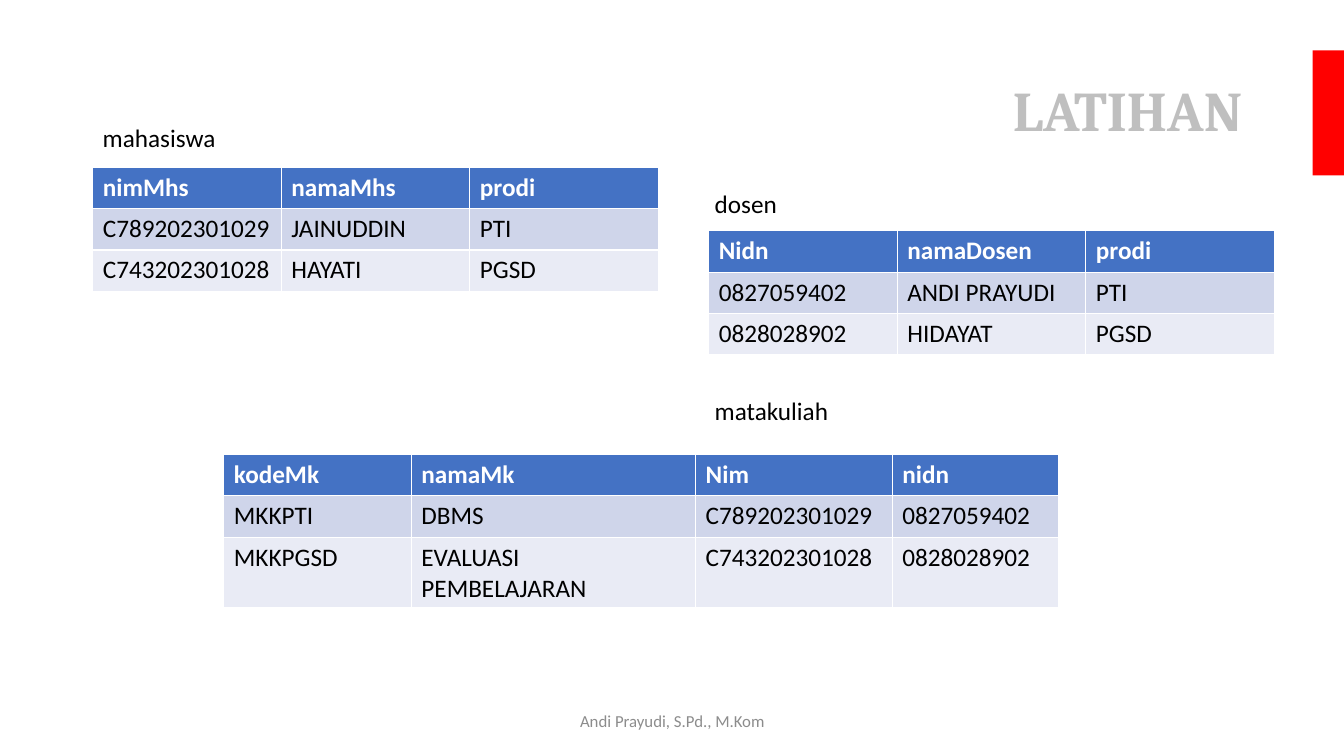
"""Build the LATIHAN exercise slide with three related database tables."""
from dataclasses import dataclass

from pptx import Presentation
from pptx.dml.color import RGBColor
from pptx.enum.shapes import MSO_SHAPE
from pptx.enum.text import MSO_ANCHOR, PP_ALIGN
from pptx.util import Inches, Pt

TITLE = "LATIHAN"
FOOTER = "Andi Prayudi, S.Pd., M.Kom"
TABLES = [
    {
        "name": "mahasiswa", "label_at": (0.92, 1.16), "at": (0.92, 1.66),
        "columns": [1.87] * 3,
        "rows": [
            ("nimMhs", "namaMhs", "prodi"),
            ("C789202301029", "JAINUDDIN", "PTI"),
            ("C743202301028", "HAYATI", "PGSD"),
        ],
    },
    {
        "name": "dosen", "label_at": (6.99, 1.82), "at": (7.03, 2.29),
        "columns": [1.87] * 3,
        "rows": [
            ("Nidn", "namaDosen", "prodi"),
            ("0827059402", "ANDI PRAYUDI", "PTI"),
            ("0828028902", "HIDAYAT", "PGSD"),
        ],
    },
    {
        "name": "matakuliah", "label_at": (6.99, 3.87), "at": (2.22, 4.51),
        "columns": [1.86, 2.82, 1.95, 1.65],
        "rows": [
            ("kodeMk", "namaMk", "Nim", "nidn"),
            ("MKKPTI", "DBMS", "C789202301029", "0827059402"),
            ("MKKPGSD", "EVALUASI PEMBELAJARAN", "C743202301028", "0828028902"),
        ],
    },
]
ROW_HEIGHT = 0.41


@dataclass(frozen=True)
class Theme:
    title_font: str = "Cambria"
    body_font: str = "Calibri"
    title_size: int = 40
    body_size: int = 18
    footer_size: int = 12
    title: str = "BFBFBF"
    text: str = "000000"
    footer: str = "8C8C8C"
    accent: str = "FF0000"
    header: str = "4472C4"
    header_text: str = "FFFFFF"
    bands: tuple = ("CFD5EA", "E9EBF5")


THEME = Theme()


def write(frame, text, size, color, font=THEME.body_font, bold=False, align=None):
    frame.text = text
    para = frame.paragraphs[0]
    para.alignment = align
    span = para.runs[0]
    span.font.name = font
    span.font.size = Pt(size)
    span.font.bold = bold
    span.font.color.rgb = RGBColor.from_string(color)
    return para


def paint(fill, color):
    fill.solid()
    fill.fore_color.rgb = RGBColor.from_string(color)


def add_box(slide, left, top, width, height):
    box = slide.shapes.add_textbox(*map(Inches, (left, top, width, height)))
    box.text_frame.word_wrap = True
    return box.text_frame


def add_title(slide):
    title = slide.shapes.title
    title.left, title.top = Inches(0.92), Inches(0.4)
    title.width, title.height = Inches(11.5), Inches(1.45)
    title.text_frame.vertical_anchor = MSO_ANCHOR.MIDDLE
    para = write(title.text_frame, TITLE, THEME.title_size, THEME.title,
                 THEME.title_font, True, PP_ALIGN.RIGHT)
    para.line_spacing = 0.9


def add_accent(slide):
    bar = slide.shapes.add_shape(
        MSO_SHAPE.RECTANGLE, *map(Inches, (13.02, 0.5, 0.64, 1.24)))
    bar.shadow.inherit = False
    paint(bar.fill, THEME.accent)
    bar.line.fill.background()


def add_footer(slide):
    frame = add_box(slide, 4.42, 6.95, 4.5, 0.4)
    frame.vertical_anchor = MSO_ANCHOR.MIDDLE
    write(frame, FOOTER, THEME.footer_size, THEME.footer, align=PP_ALIGN.CENTER)


def add_data_table(slide, data):
    label = add_box(slide, *data["label_at"], 3.5, 0.4)
    write(label, data["name"], THEME.body_size, THEME.text)

    rows, columns = data["rows"], data["columns"]
    size = (sum(columns), ROW_HEIGHT * len(rows))
    table = slide.shapes.add_table(
        len(rows), len(columns), *map(Inches, (*data["at"], *size))).table
    for column, width in zip(table.columns, columns):
        column.width = Inches(width)
    for index, values in enumerate(rows):
        is_header = index == 0
        table.rows[index].height = Inches(ROW_HEIGHT)
        fill = THEME.header if is_header else THEME.bands[(index - 1) % 2]
        color = THEME.header_text if is_header else THEME.text
        for cell, value in zip(table.rows[index].cells, values):
            paint(cell.fill, fill)
            write(cell.text_frame, value, THEME.body_size, color, bold=is_header)


def main():
    deck = Presentation()
    deck.slide_width, deck.slide_height = Inches(13.33), Inches(7.5)
    slide = deck.slides.add_slide(deck.slide_layouts[5])
    add_title(slide)
    add_accent(slide)
    add_footer(slide)
    for data in TABLES:
        add_data_table(slide, data)
    deck.save("out.pptx")


if __name__ == "__main__":
    main()
